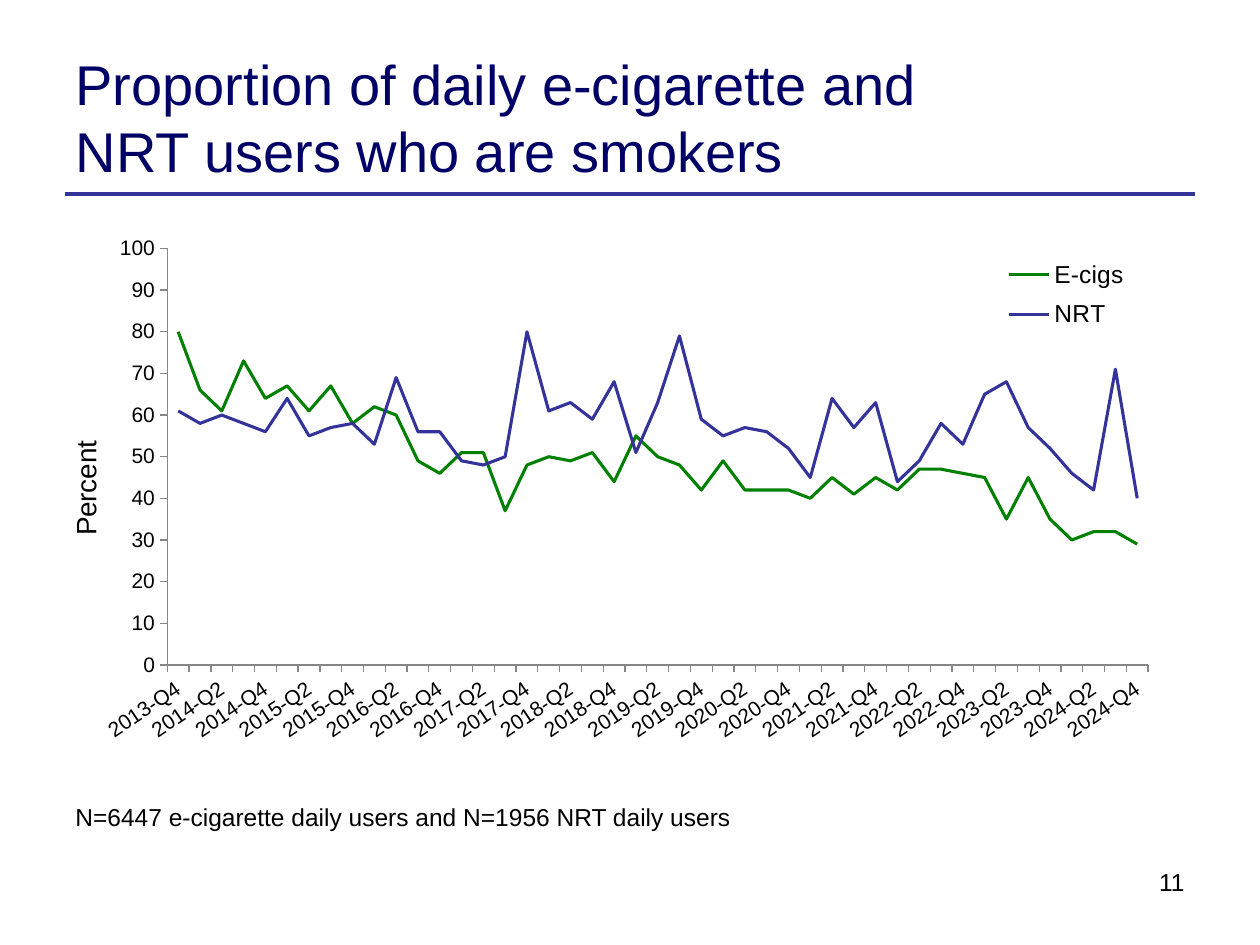
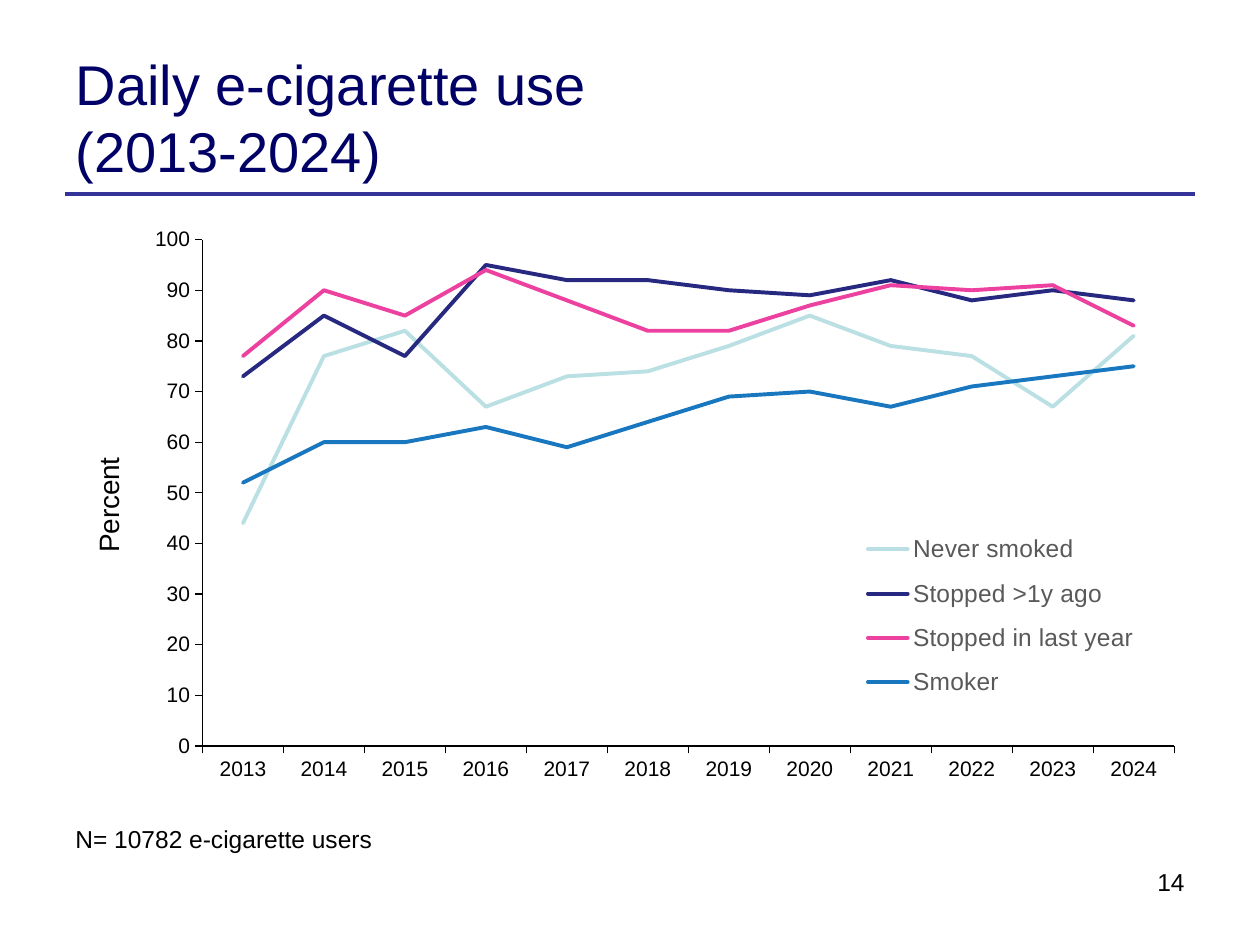
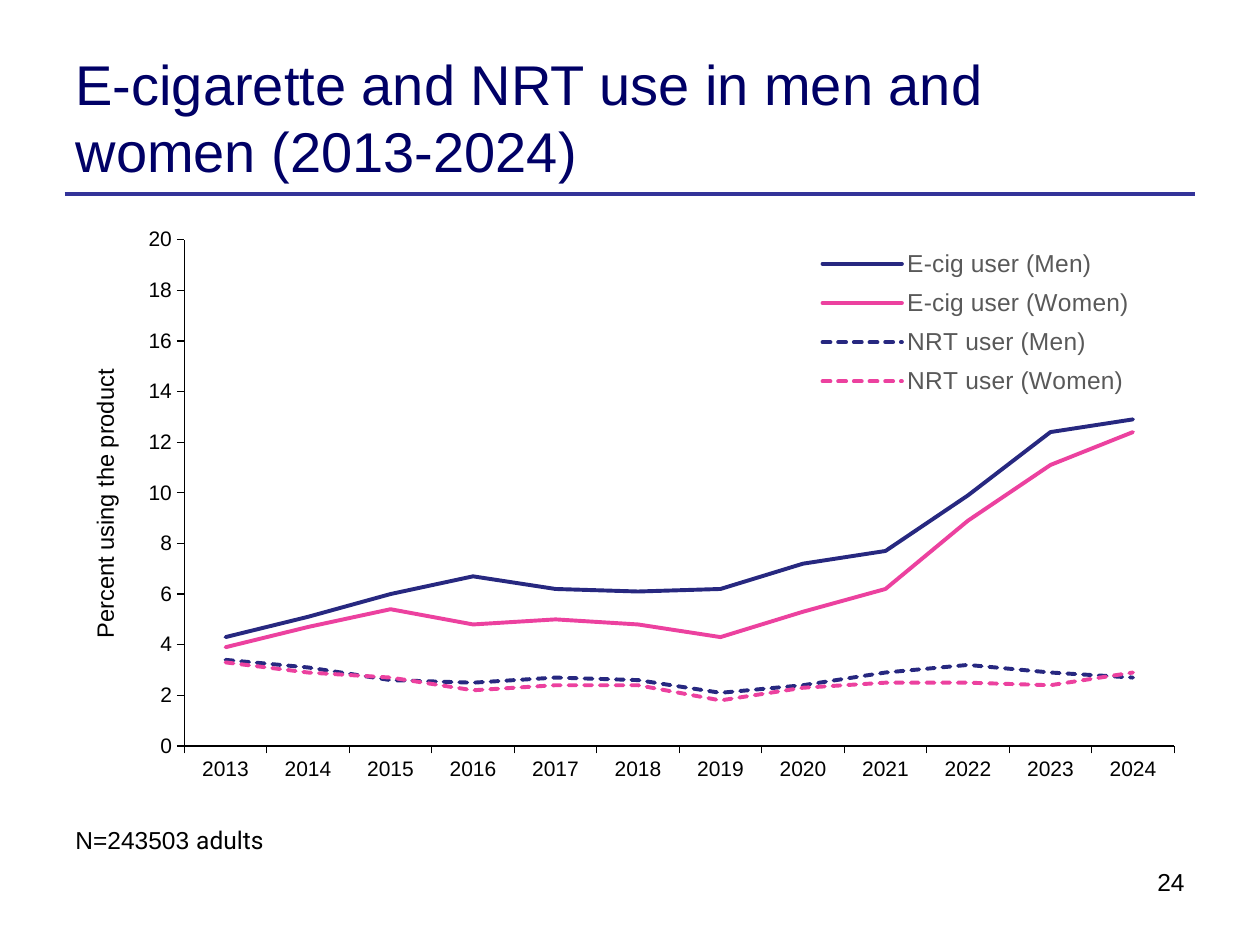
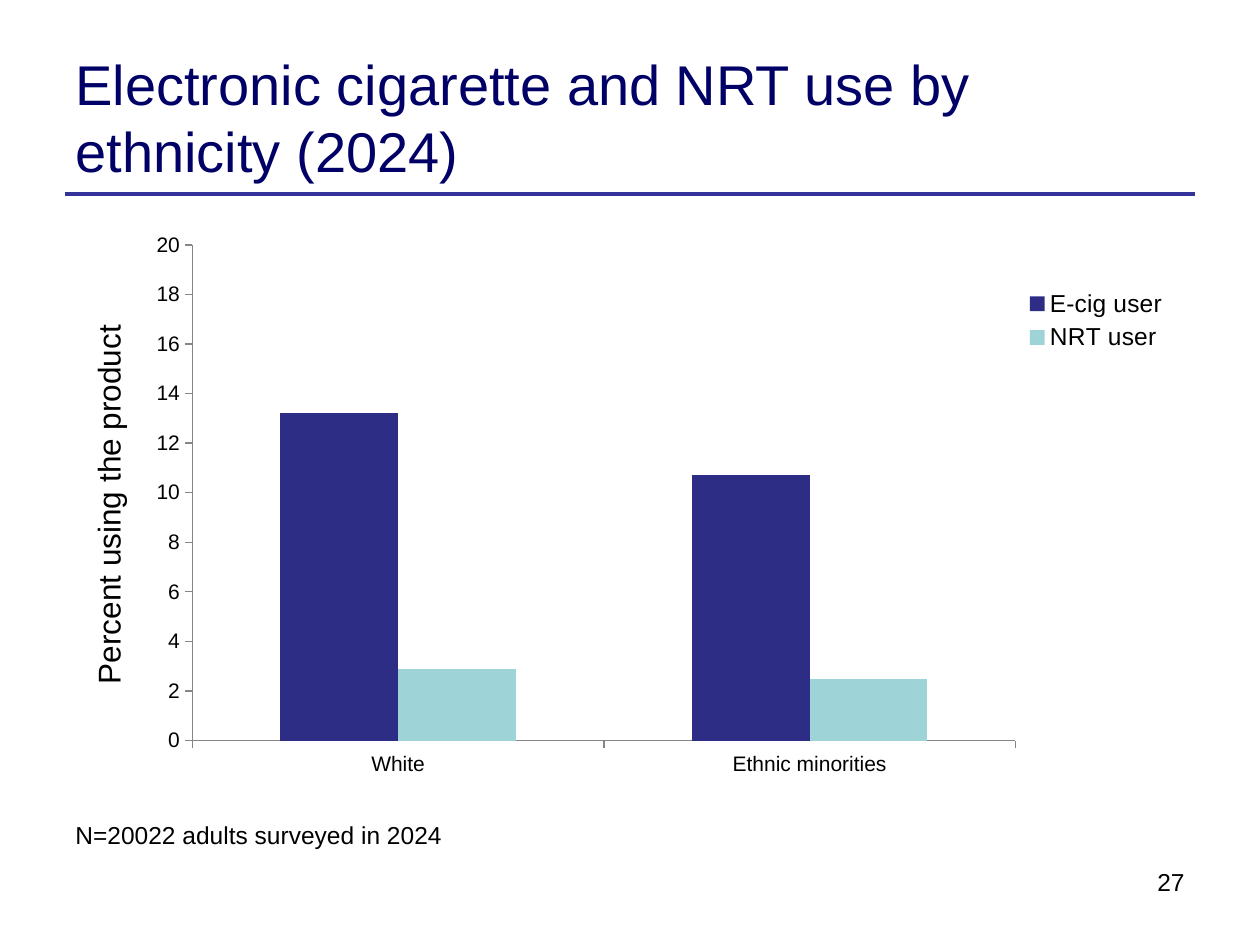
from dataclasses import dataclass

from lxml import etree
from pptx import Presentation
from pptx.chart.data import CategoryChartData
from pptx.dml.color import RGBColor
from pptx.enum.chart import XL_CHART_TYPE, XL_LEGEND_POSITION, XL_TICK_MARK
from pptx.enum.dml import MSO_LINE
from pptx.enum.shapes import MSO_CONNECTOR
from pptx.enum.text import MSO_ANCHOR, MSO_AUTO_SIZE, PP_ALIGN
from pptx.oxml.ns import qn
from pptx.util import Pt

LINE, COLUMN = XL_CHART_TYPE.LINE, XL_CHART_TYPE.COLUMN_CLUSTERED
KEY_RIGHT, KEY_BOTTOM = XL_LEGEND_POSITION.RIGHT, XL_LEGEND_POSITION.BOTTOM
OUTSIDE, NO_TICK = XL_TICK_MARK.OUTSIDE, XL_TICK_MARK.NONE
STRAIGHT = MSO_CONNECTOR.STRAIGHT
DASH = MSO_LINE.SQUARE_DOT
MIDDLE, NO_FIT = MSO_ANCHOR.MIDDLE, MSO_AUTO_SIZE.NONE
LEFT, RIGHT = PP_ALIGN.LEFT, PP_ALIGN.RIGHT

NAVY = RGBColor(0x00, 0x00, 0x66)
INDIGO = RGBColor(0x33, 0x33, 0x99)
BLACK = RGBColor(0x00, 0x00, 0x00)
GREY = RGBColor(0x59, 0x59, 0x59)
MID_GREY = RGBColor(0x86, 0x86, 0x86)
GREEN = RGBColor(0x00, 0x80, 0x00)
PALE = RGBColor(0xBB, 0xE0, 0xE3)
INK = RGBColor(0x27, 0x28, 0x80)
PINK = RGBColor(0xEC, 0x41, 0x9F)
BLUE = RGBColor(0x19, 0x77, 0xC0)
VIOLET = RGBColor(0x2D, 0x2D, 0x86)
TEAL = RGBColor(0x9E, 0xD3, 0xD7)

FONT = "Arial"
NOTE_FONT = "Roboto"
EDGE = 36
TITLE_ONLY = 5


@dataclass(frozen=True)
class Series:
    name: str
    color: RGBColor
    values: tuple[float, ...]
    dashed: bool = False


@dataclass(frozen=True)
class Plot:
    """Chart settings; frames are fractions of the chart (x, y, w, h)."""
    top: float
    height: float
    labels: list[str]
    series: list[Series]
    frame: tuple[float, ...]
    key: tuple[float, ...]
    axis: str
    axis_size: float
    axis_at: tuple[float, ...]
    peak: int
    step: int
    kind: int = LINE
    weight: float = 2.25
    round_ends: bool = False
    axis_color: RGBColor = BLACK
    key_color: RGBColor = BLACK
    key_side: int = KEY_RIGHT
    overlay: bool = False
    tilt: int = 0


@dataclass(frozen=True)
class Page:
    title: str
    number: int
    note: str
    note_top: float
    plot: Plot
    note_tail: str = ""


# Shared slide parts
def style(par, size: float, color: RGBColor, align=LEFT, name: str | None = FONT) -> None:
    par.alignment = align
    par.font.size = Pt(size)
    par.font.color.rgb = color
    if name:
        par.font.name = name


def add_title(slide, text: str) -> None:
    title = slide.shapes.title
    title.left, title.top, title.width, title.height = Pt(EDGE), Pt(21.6), Pt(568), Pt(90)
    frame = title.text_frame
    frame.text = text
    frame.auto_size = NO_FIT
    frame.vertical_anchor = MIDDLE
    style(frame.paragraphs[0], 32, NAVY)


def add_rule(slide) -> None:
    rule = slide.shapes.add_connector(STRAIGHT, Pt(36.9), Pt(111.1), Pt(683.1), Pt(111.1))
    rule.line.color.rgb = INDIGO
    rule.line.width = Pt(2.25)
    etree.SubElement(rule.element.spPr, qn("a:effectLst"))


def add_text(slide, left: float, top: float, width: float, height: float,
             text: str, align=LEFT, tail: str = "") -> None:
    box = slide.shapes.add_textbox(Pt(left), Pt(top), Pt(width), Pt(height))
    frame = box.text_frame
    frame.word_wrap = True
    par = frame.paragraphs[0]
    style(par, 14, BLACK, align, None if tail else FONT)
    parts = [(text, FONT), (tail, NOTE_FONT)] if tail else [(text, None)]
    for words, name in parts:
        run = par.add_run()
        run.text = words
        if name:
            run.font.name = name


# Chart parts
def place(parent, spot: tuple[float, ...], after: str = "", inner: bool = False) -> None:
    """Give a chart part a manual layout, after the named child or first."""
    old = parent.find(qn("c:layout"))
    if old is not None:
        parent.remove(old)
    layout = etree.Element(qn("c:layout"))
    manual = etree.SubElement(layout, qn("c:manualLayout"))
    rules = [("layoutTarget", "inner")] if inner else []
    rules += [("xMode", "edge"), ("yMode", "edge")]
    rules += [(tag, str(part)) for tag, part in zip("xywh", spot)]
    for tag, value in rules:
        etree.SubElement(manual, qn(f"c:{tag}")).set("val", value)
    if after:
        parent.find(qn(after)).addnext(layout)
    else:
        parent.insert(0, layout)


def format_axis(axis, color: RGBColor) -> None:
    axis.has_major_gridlines = False
    axis.major_tick_mark = OUTSIDE
    axis.minor_tick_mark = NO_TICK
    axis.format.line.color.rgb = color
    axis.format.line.width = Pt(0.75)
    font = axis.tick_labels.font
    font.size, font.name, font.color.rgb = Pt(12), FONT, BLACK


def turn(part, angle: int) -> None:
    body = next(part.iter(qn("a:bodyPr")))
    body.set("rot", str(angle * 60000))
    body.set("vert", "horz")


def add_axes(chart, plot: Plot) -> None:
    across, up = chart.category_axis, chart.value_axis
    for axis in (across, up):
        format_axis(axis, plot.axis_color)
    if plot.tilt:
        turn(across._element.find(qn("c:txPr")), plot.tilt)
    up.minimum_scale, up.maximum_scale, up.major_unit = 0, plot.peak, plot.step
    title = up.axis_title
    frame = title.text_frame
    frame.text = plot.axis
    font = frame.paragraphs[0].font
    font.size, font.name, font.color.rgb = Pt(plot.axis_size), FONT, BLACK
    font.bold = False
    turn(title._element, -90)
    place(title._element, plot.axis_at, "c:tx")


def add_key(chart, plot: Plot) -> None:
    chart.has_legend = True
    key = chart.legend
    key.position = plot.key_side
    key.include_in_layout = plot.overlay
    key.font.size, key.font.name, key.font.color.rgb = Pt(14), FONT, plot.key_color
    place(key._element, plot.key, "c:legendPos")


def paint(chart, plot: Plot) -> None:
    body = chart.plots[0]
    body.vary_by_categories = False
    if plot.kind == COLUMN:
        body.gap_width, body.overlap = 150, 0
    for drawn, given in zip(body.series, plot.series):
        if plot.kind == COLUMN:
            drawn.format.fill.solid()
            drawn.format.fill.fore_color.rgb = given.color
            continue
        drawn.smooth = False
        line = drawn.format.line
        line.color.rgb, line.width = given.color, Pt(plot.weight)
        if given.dashed:
            line.dash_style = DASH
        if plot.round_ends:
            drawn._element.find(f"{qn('c:spPr')}/{qn('a:ln')}").set("cap", "rnd")


def add_plot(slide, plot: Plot) -> None:
    data = CategoryChartData()
    data.categories = plot.labels
    for item in plot.series:
        data.add_series(item.name, item.values)
    chart = slide.shapes.add_chart(
        plot.kind, Pt(EDGE), Pt(plot.top), Pt(648), Pt(plot.height), data).chart
    chart.has_title = False
    chart.font.name, chart.font.size, chart.font.color.rgb = FONT, Pt(12), BLACK
    paint(chart, plot)
    add_axes(chart, plot)
    add_key(chart, plot)
    place(chart._chartSpace.chart.plotArea, plot.frame, inner=True)


# Content
QUARTERS = [f"{year}-Q{part}" for year in range(2013, 2025)
            for part in range(1, 5)][3:]
YEARS = [str(year) for year in range(2013, 2025)]

SMOKERS = Plot(
    126, 314, QUARTERS,
    [Series("E-cigs", GREEN, (
        80, 66, 61, 73, 64, 67, 61, 67, 58, 62, 60, 49, 46, 51, 51,
        37, 48, 50, 49, 51, 44, 55, 50, 48, 42, 49, 42, 42, 42, 40,
        45, 41, 45, 42, 47, 47, 46, 45, 35, 45, 35, 30, 32, 32, 29)),
     Series("NRT", INDIGO, (
        61, 58, 60, 58, 56, 64, 55, 57, 58, 53, 69, 56, 56, 49, 48,
        50, 80, 61, 63, 59, 68, 51, 63, 79, 59, 55, 57, 56, 52, 45,
        64, 57, 63, 44, 49, 58, 53, 65, 68, 57, 52, 46, 42, 71, 40))],
    frame=(0.092, 0.051, 0.865, 0.758), key=(0.825, 0.052, 0.12, 0.165),
    axis="Percent", axis_size=16, axis_at=(0, 0.392), peak=100, step=10,
    weight=1.75, axis_color=MID_GREY, overlay=True, tilt=-34)

DAILY = Plot(
    123.8, 356.4, YEARS,
    [Series("Never smoked", PALE, (44, 77, 82, 67, 73, 74, 79, 85, 79, 77, 67, 81)),
     Series("Stopped >1y ago", INK, (73, 85, 77, 95, 92, 92, 90, 89, 92, 88, 90, 88)),
     Series("Stopped in last year", PINK, (77, 90, 85, 94, 88, 82, 82, 87, 91, 90, 91, 83)),
     Series("Smoker", BLUE, (52, 60, 60, 63, 59, 64, 69, 70, 67, 71, 73, 75))],
    frame=(0.123, 0.037, 0.857, 0.812), key=(0.697, 0.485, 0.26, 0.31),
    axis="Percent", axis_size=16, axis_at=(0.02, 0.378), peak=100, step=10,
    round_ends=True, key_color=GREY, key_side=KEY_BOTTOM)

GENDER = Plot(
    123.8, 356.4, YEARS,
    [Series("E-cig user (Men)", INK,
            (4.3, 5.1, 6, 6.7, 6.2, 6.1, 6.2, 7.2, 7.7, 9.9, 12.4, 12.9)),
     Series("E-cig user (Women)", PINK,
            (3.9, 4.7, 5.4, 4.8, 5, 4.8, 4.3, 5.3, 6.2, 8.9, 11.1, 12.4)),
     Series("NRT user (Men)", INK,
            (3.4, 3.1, 2.6, 2.5, 2.7, 2.6, 2.1, 2.4, 2.9, 3.2, 2.9, 2.7), True),
     Series("NRT user (Women)", PINK,
            (3.3, 2.9, 2.7, 2.2, 2.4, 2.4, 1.8, 2.3, 2.5, 2.5, 2.4, 2.9), True)],
    frame=(0.107, 0.037, 0.873, 0.812), key=(0.655, 0.035, 0.3, 0.27),
    axis="Percent using the product", axis_size=13.5, axis_at=(0.02, 0.238),
    peak=20, step=2, round_ends=True, key_color=GREY, key_side=KEY_BOTTOM)

ETHNIC = Plot(
    127.4, 322.6, ["White", "Ethnic minorities"],
    [Series("E-cig user", VIOLET, (13.2, 10.7)),
     Series("NRT user", TEAL, (2.9, 2.5))],
    frame=(0.114, 0.039, 0.726, 0.878), key=(0.841, 0.108, 0.14, 0.13),
    axis="Percent using the product", axis_size=18, axis_at=(0.017, 0.171),
    peak=20, step=2, kind=COLUMN, axis_color=MID_GREY)

PAGES = [
    Page("Proportion of daily e-cigarette and NRT users who are smokers", 11,
         "N=6447 e-cigarette daily users and N=1956 NRT daily users", 454.7, SMOKERS),
    Page("Daily e-cigarette use\v(2013-2024)", 14,
         "N= 10782 e-cigarette users", 467.3, DAILY),
    Page("E-cigarette and NRT use in men and women (2013-2024)", 24,
         "N=243503 ", 468, GENDER, "adults"),
    Page("Electronic cigarette and NRT use by ethnicity (2024)", 27,
         "N=20022 adults surveyed in 2024", 465, ETHNIC),
]


def main() -> None:
    deck = Presentation()
    deck.slide_width, deck.slide_height = Pt(720), Pt(540)
    for page in PAGES:
        slide = deck.slides.add_slide(deck.slide_layouts[TITLE_ONLY])
        add_rule(slide)
        add_title(slide, page.title)
        add_plot(slide, page.plot)
        add_text(slide, 484.6, 491.8, 199.4, 37.4, str(page.number), RIGHT)
        add_text(slide, EDGE, page.note_top, 612, 24.5, page.note, tail=page.note_tail)
    deck.save("out.pptx")


if __name__ == "__main__":
    main()
